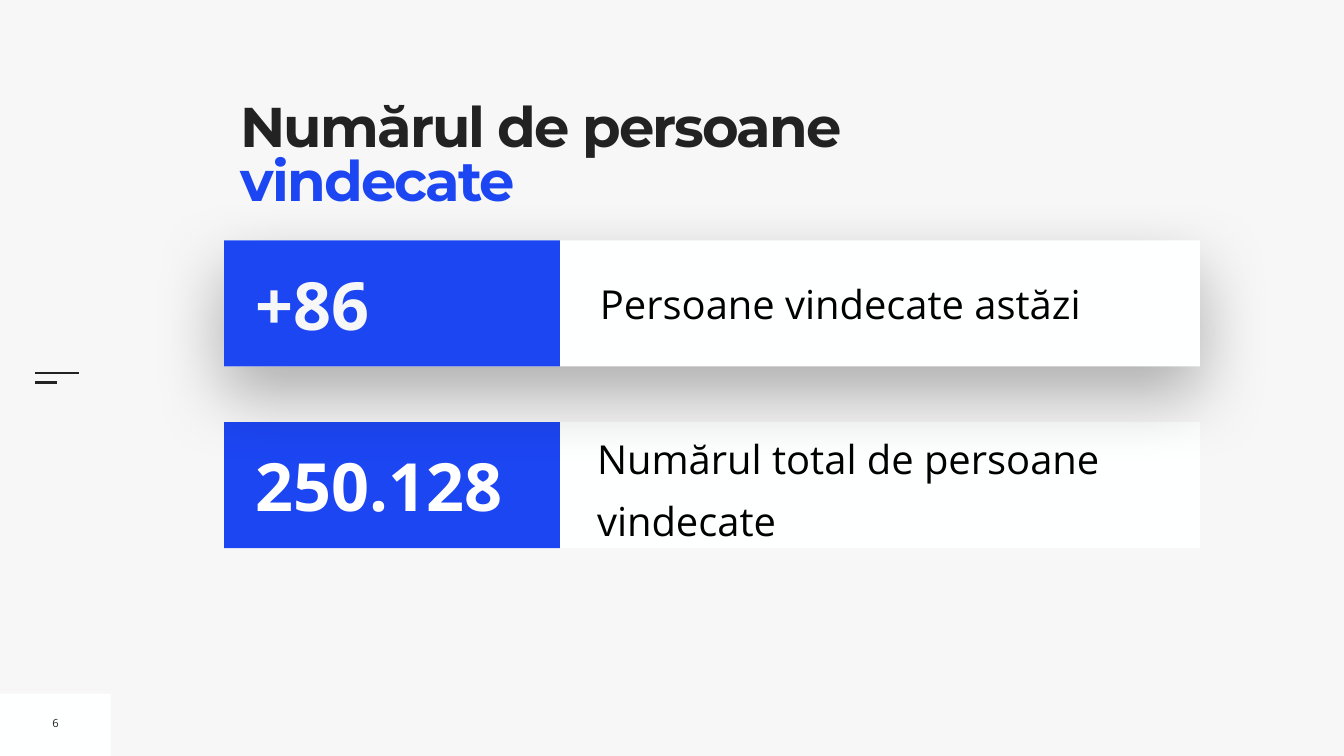
from lxml import etree
from pptx import Presentation
from pptx.dml.color import RGBColor
from pptx.enum.shapes import MSO_CONNECTOR, MSO_SHAPE
from pptx.enum.text import MSO_ANCHOR, PP_ALIGN
from pptx.oxml.ns import qn
from pptx.util import Pt

COLORS = {"paper": "F7F7F7", "card": "FEFFFF", "blue": "1D46F3",
          "ink": "222222", "black": "000000", "white": "FFFFFF"}

# Content: rows from back to front, so the upper card's shadow falls on the lower
TITLE = [("Numărul de persoane ", "ink"), ("vindecate", "blue")]
PAGE_NUMBER = "6"
ROWS = [
    {"top": 603, "figure": "250.128", "figure_color": "white", "shadow": False,
     "label": "Numărul total de persoane vindecate",
     "label_box": (853, 604, 860, 170),
     "label_format": {"margin": 0, "line_spacing": 1.3, "space_before": 20}},
    {"top": 343.5, "figure": "+86", "figure_color": "paper", "shadow": True,
     "label": "Persoane vindecate astăzi",
     "label_box": (850, 392, 847, 83),
     "label_format": {}},
]
MARK_LINES = [(533.5, 63), (546.5, 31.5)]  # y, length

ROW_LEFT, ROW_WIDTH, ROW_HEIGHT = 320, 1394, 180
FIGURE_WIDTH = 480
FIGURE_INSET = 38.5, 25


def rgb(name):
    return RGBColor.from_string(COLORS[name])


def write_text(shape, runs, *, size, font="Open Sans", bold=False, margin=7.2,
               anchor=MSO_ANCHOR.MIDDLE, align=PP_ALIGN.LEFT, wrap=True,
               line_spacing=None, space_before=0, tracking=None):
    frame = shape.text_frame
    frame.word_wrap = wrap
    frame.vertical_anchor = anchor
    frame.margin_left = frame.margin_right = Pt(margin)
    frame.margin_top = frame.margin_bottom = Pt(margin)
    paragraph = frame.paragraphs[0]
    paragraph.alignment = align
    paragraph.line_spacing = line_spacing
    paragraph.space_before = Pt(space_before)
    for text, color in runs:
        run = paragraph.add_run()
        run.text = text
        run.font.name, run.font.size, run.font.bold = font, Pt(size), bold
        run.font.color.rgb = rgb(color)
        if tracking is not None:
            run.font._element.set("spc", str(round(tracking * 100)))


def add_box(slide, left, top, width, height, color):
    box = slide.shapes.add_shape(MSO_SHAPE.RECTANGLE, Pt(left), Pt(top), Pt(width), Pt(height))
    box.shadow.inherit = False
    box.fill.solid()
    box.fill.fore_color.rgb = rgb(color)
    box.line.fill.background()
    return box


def add_text(slide, box, text, color, **text_format):
    textbox = slide.shapes.add_textbox(*map(Pt, box))
    write_text(textbox, [(text, color)], **text_format)


def add_shadow(shape):
    effects = shape._element.spPr.find(qn("a:effectLst"))
    shadow = etree.SubElement(effects, qn("a:outerShdw"), blurRad=str(Pt(100)),
                              dist=str(Pt(40)), dir="5400000", rotWithShape="0")
    color = etree.SubElement(shadow, qn("a:srgbClr"), val=COLORS["black"])
    etree.SubElement(color, qn("a:alpha"), val="30000")


def add_row(slide, row):
    top = row["top"]
    card = add_box(slide, ROW_LEFT, top, ROW_WIDTH, ROW_HEIGHT, "card")
    if row["shadow"]:
        add_shadow(card)
    add_text(slide, row["label_box"], row["label"], "black", size=57, **row["label_format"])
    add_box(slide, ROW_LEFT, top, FIGURE_WIDTH, ROW_HEIGHT, "blue")
    dx, dy = FIGURE_INSET
    figure_box = (ROW_LEFT + dx, top + dy, 434, ROW_HEIGHT - 2 * dy)
    add_text(slide, figure_box, row["figure"], row["figure_color"], size=95, bold=True)


def main():
    deck = Presentation()
    deck.slide_width, deck.slide_height = Pt(1920), Pt(1080)
    slide = deck.slides.add_slide(deck.slide_layouts[5])
    slide.background.fill.solid()
    slide.background.fill.fore_color.rgb = rgb("paper")

    # Title
    title = slide.shapes.title
    title.left, title.top, title.width, title.height = map(Pt, (343.5, 149, 937, 197))
    title.fill.solid()
    title.fill.fore_color.rgb = rgb("paper")
    write_text(title, TITLE, size=80, font="Montserrat", bold=True, margin=0,
               anchor=MSO_ANCHOR.TOP, line_spacing=0.8, tracking=-2.7)

    # Page number corner
    add_box(slide, 0, 991, 158, 89, "card")
    add_text(slide, (67, 1014.5, 24.5, 37), PAGE_NUMBER, "ink", size=16,
             align=PP_ALIGN.CENTER, wrap=False)

    # Side mark
    for y, length in MARK_LINES:
        mark = slide.shapes.add_connector(MSO_CONNECTOR.STRAIGHT, Pt(50), Pt(y),
                                          Pt(50 + length), Pt(y))
        mark.line.color.rgb = rgb("ink")
        mark.line.width = Pt(3)
        etree.SubElement(mark._element.spPr, qn("a:effectLst"))

    # Figure rows
    for row in ROWS:
        add_row(slide, row)

    deck.save("out.pptx")


if __name__ == "__main__":
    main()
